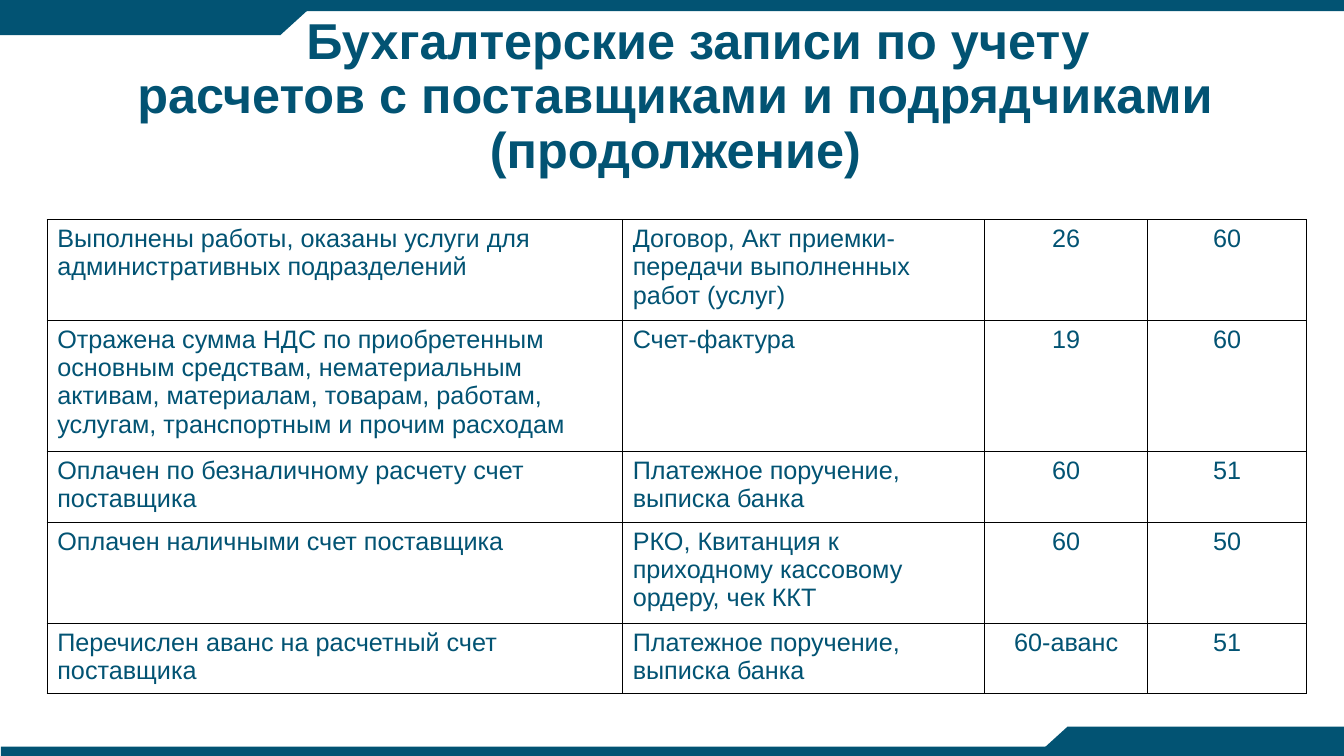
from lxml.etree import SubElement
from pptx import Presentation
from pptx.dml.color import RGBColor
from pptx.enum.shapes import MSO_SHAPE
from pptx.enum.text import MSO_ANCHOR, PP_ALIGN
from pptx.oxml.ns import qn
from pptx.util import Pt

COLORS = {"teal": "025373", "border": "000000"}
COLUMN_WIDTHS = [411, 258.5, 116.6, 113.2]
LINE_HEIGHT = 20.1
CELL_PADDING = 7.2

# Text lines in the row, then operation, document, debit, credit
ENTRIES = [
    (3, "Выполнены работы, оказаны услуги для административных подразделений",
     "Договор, Акт приемки- передачи выполненных работ (услуг)", "26", "60"),
    (4, "Отражена сумма НДС по приобретенным основным средствам, нематериальным "
        "активам, материалам, товарам, работам, услугам, транспортным и прочим расходам",
     "Счет-фактура", "19", "60"),
    (2, "Оплачен по безналичному расчету счет поставщика",
     "Платежное поручение, выписка банка", "60", "51"),
    (3, "Оплачен наличными счет поставщика",
     "РКО, Квитанция к приходному кассовому ордеру, чек ККТ", "60", "50"),
    (2, "Перечислен аванс на расчетный счет поставщика",
     "Платежное поручение, выписка банка", "60-аванс", "51"),
]


class SlideBuilder:
    def __init__(self, slide, font="Arial"):
        self.slide = slide
        self.font = font

    def block(self, kind, left, top, width, height, rotation=0):
        shape = self.slide.shapes.add_shape(
            kind, Pt(left), Pt(top), Pt(width), Pt(height))
        shape.shadow.inherit = False
        shape.fill.solid()
        shape.fill.fore_color.rgb = RGBColor.from_string(COLORS["teal"])
        shape.line.fill.background()
        shape.rotation = rotation

    def run(self, paragraph, text, size, bold=False):
        run = paragraph.add_run()
        run.text = text
        run.font.name = self.font
        run.font.size = Pt(size)
        run.font.bold = bold
        run.font.color.rgb = RGBColor.from_string(COLORS["teal"])

    def title(self, lines, left, top, width, height, first_indent):
        shape = self.slide.shapes.add_textbox(
            Pt(left), Pt(top), Pt(width), Pt(height))
        frame = shape.text_frame
        frame.word_wrap = True
        frame.vertical_anchor = MSO_ANCHOR.MIDDLE
        paragraph = frame.paragraphs[0]
        paragraph.alignment = PP_ALIGN.CENTER
        paragraph.line_spacing = 0.9
        properties = paragraph._p.get_or_add_pPr()
        properties.set("marL", "0")
        properties.set("indent", str(Pt(first_indent)))
        for index, line in enumerate(lines):
            if index:
                paragraph.add_line_break()
            self.run(paragraph, line, 36, bold=True)

    def borders(self, cell):
        properties = cell._tc.get_or_add_tcPr()
        for side in ("a:lnL", "a:lnR", "a:lnT", "a:lnB"):
            line = SubElement(properties, qn(side), w=str(Pt(1)))
            fill = SubElement(line, qn("a:solidFill"))
            SubElement(fill, qn("a:srgbClr"), val=COLORS["border"])

    def table(self, entries, left, top):
        heights = [entry[0] * LINE_HEIGHT + CELL_PADDING for entry in entries]
        table = self.slide.shapes.add_table(
            len(entries), len(COLUMN_WIDTHS), Pt(left), Pt(top),
            Pt(sum(COLUMN_WIDTHS)), Pt(sum(heights))).table
        table.first_row = False
        table.horz_banding = False
        for column, width in zip(table.columns, COLUMN_WIDTHS):
            column.width = Pt(width)
        for row, height, (_, *texts) in zip(table.rows, heights, entries):
            row.height = Pt(height)
            for index, (cell, text) in enumerate(zip(row.cells, texts)):
                self.borders(cell)
                cell.fill.background()
                paragraph = cell.text_frame.paragraphs[0]
                paragraph.alignment = PP_ALIGN.LEFT if index < 2 else PP_ALIGN.CENTER
                self.run(paragraph, text, 18)


def main():
    presentation = Presentation()
    presentation.slide_width = Pt(960)
    presentation.slide_height = Pt(540)
    builder = SlideBuilder(
        presentation.slides.add_slide(presentation.slide_layouts[6]))

    for left, top in ((0, 0), (0.7, 533.3)):
        builder.block(MSO_SHAPE.RECTANGLE, left, top, 960, 7.9)
    for tab_left, slant_left, top, rotation in (
            (0, 176.4, 3.6, 0), (762.5, 738.7, 519.1, 180)):
        builder.block(MSO_SHAPE.RECTANGLE, tab_left, top, 200.2, 21.6)
        builder.block(MSO_SHAPE.FLOWCHART_MERGE, slant_left, top, 47.5, 21.6, rotation)

    builder.title(
        ["Бухгалтерские записи по учету ",
         "расчетов с поставщиками и подрядчиками (продолжение)"],
        6, 10, 953, 119, first_indent=42.5)
    builder.table(ENTRIES, 33.8, 157)
    presentation.save("out.pptx")


if __name__ == "__main__":
    main()
